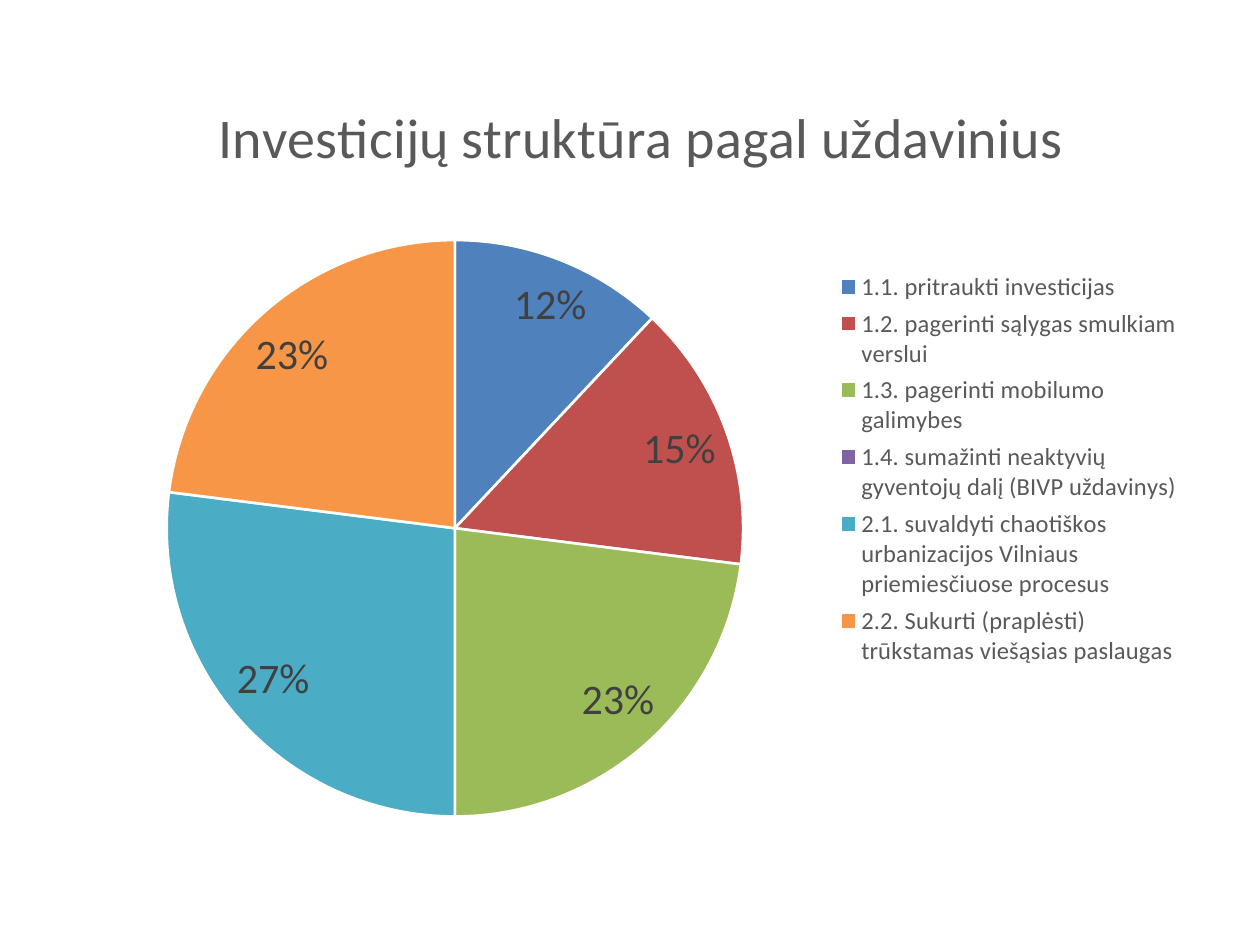
from dataclasses import dataclass

from lxml.etree import SubElement
from pptx import Presentation
from pptx.chart.data import CategoryChartData
from pptx.dml.color import RGBColor
from pptx.enum.chart import XL_CHART_TYPE as ChartType
from pptx.enum.chart import XL_LABEL_POSITION as LabelPosition
from pptx.enum.chart import XL_LEGEND_POSITION as LegendPosition
from pptx.oxml.ns import qn
from pptx.util import Cm, Pt


@dataclass(frozen=True)
class Theme:
    font: str = "Calibri"
    muted: str = "595959"
    label: str = "404040"
    border: str = "FFFFFF"
    title_size: int = 32
    label_size: int = 24
    legend_size: int = 14
    base_size: int = 10


THEME = Theme()
TITLE = "Investicijų struktūra pagal uždavinius"
TASKS = [
    ("1.1. pritraukti investicijas", 12, "4F81BD"),
    ("1.2. pagerinti sąlygas smulkiam verslui", 15, "C0504D"),
    ("1.3. pagerinti mobilumo galimybes", 23, "9BBB59"),
    ("1.4. sumažinti neaktyvių gyventojų dalį (BIVP uždavinys)", 0, "8064A2"),
    ("2.1. suvaldyti chaotiškos urbanizacijos Vilniaus priemiesčiuose procesus", 27, "4BACC6"),
    ("2.2. Sukurti (praplėsti) trūkstamas viešąsias paslaugas", 23, "F79646"),
]


def style_font(font, size, color):
    font.name = THEME.font
    font.size = Pt(size)
    font.bold = False
    font.color.rgb = RGBColor.from_string(color)


def place(part, index, inner=False, **fractions):
    for previous in part.findall(qn("c:layout")):
        part.remove(previous)
    layout = part.makeelement(qn("c:layout"))
    part.insert(index, layout)
    manual = SubElement(layout, qn("c:manualLayout"))
    if inner:
        SubElement(manual, qn("c:layoutTarget")).set("val", "inner")
    for axis in ("x", "y"):
        SubElement(manual, qn(f"c:{axis}Mode")).set("val", "edge")
    for side, fraction in fractions.items():
        SubElement(manual, qn(f"c:{side}")).set("val", str(fraction))


def add_title(chart):
    chart.has_title = True
    title = chart.chart_title
    title.include_in_layout = False
    heading = title.text_frame.paragraphs[0]
    heading.text = TITLE
    style_font(heading.font, THEME.title_size, THEME.muted)
    place(title._element, 1, x=0.12, y=0.05)


def add_legend(chart):
    chart.has_legend = True
    legend = chart.legend
    legend.position = LegendPosition.RIGHT
    legend.include_in_layout = False
    style_font(legend.font, THEME.legend_size, THEME.muted)
    place(legend._element, 1, x=0.68, y=0.26, w=0.31, h=0.48)


def color_slices(plot):
    plot.vary_by_categories = True
    for index, (_, _, color) in enumerate(TASKS):
        slice_format = plot.series[0].points[index].format
        slice_format.fill.solid()
        slice_format.fill.fore_color.rgb = RGBColor.from_string(color)
        slice_format.line.color.rgb = RGBColor.from_string(THEME.border)
        slice_format.line.width = Pt(1.5)


def add_shares(plot):
    plot.has_data_labels = True
    shares = plot.data_labels
    shares.show_percentage = True
    shares.show_value = False
    shares.number_format = "0%"
    shares.number_format_is_linked = False
    shares.position = LabelPosition.BEST_FIT
    style_font(shares.font, THEME.label_size, THEME.label)


def add_investment_pie(slide):
    investments = CategoryChartData()
    investments.categories = [task for task, _, _ in TASKS]
    investments.add_series("Series 1", [share for _, share, _ in TASKS])
    chart = slide.shapes.add_chart(
        ChartType.PIE, Cm(1.5), Cm(0.91), Cm(22.56), Cm(17.09), investments
    ).chart
    style_font(chart.font, THEME.base_size, "000000")
    add_title(chart)
    add_legend(chart)
    plot = chart.plots[0]
    color_slices(plot)
    add_shares(plot)
    plot_area = chart._chartSpace.chart.plotArea
    place(plot_area, 0, inner=True, x=0.08, y=0.23, w=0.52, h=0.68)


def main():
    deck = Presentation()
    deck.slide_width, deck.slide_height = Cm(25.4), Cm(19.05)
    slide = deck.slides.add_slide(deck.slide_layouts[6])
    add_investment_pie(slide)
    deck.save("out.pptx")


if __name__ == "__main__":
    main()
